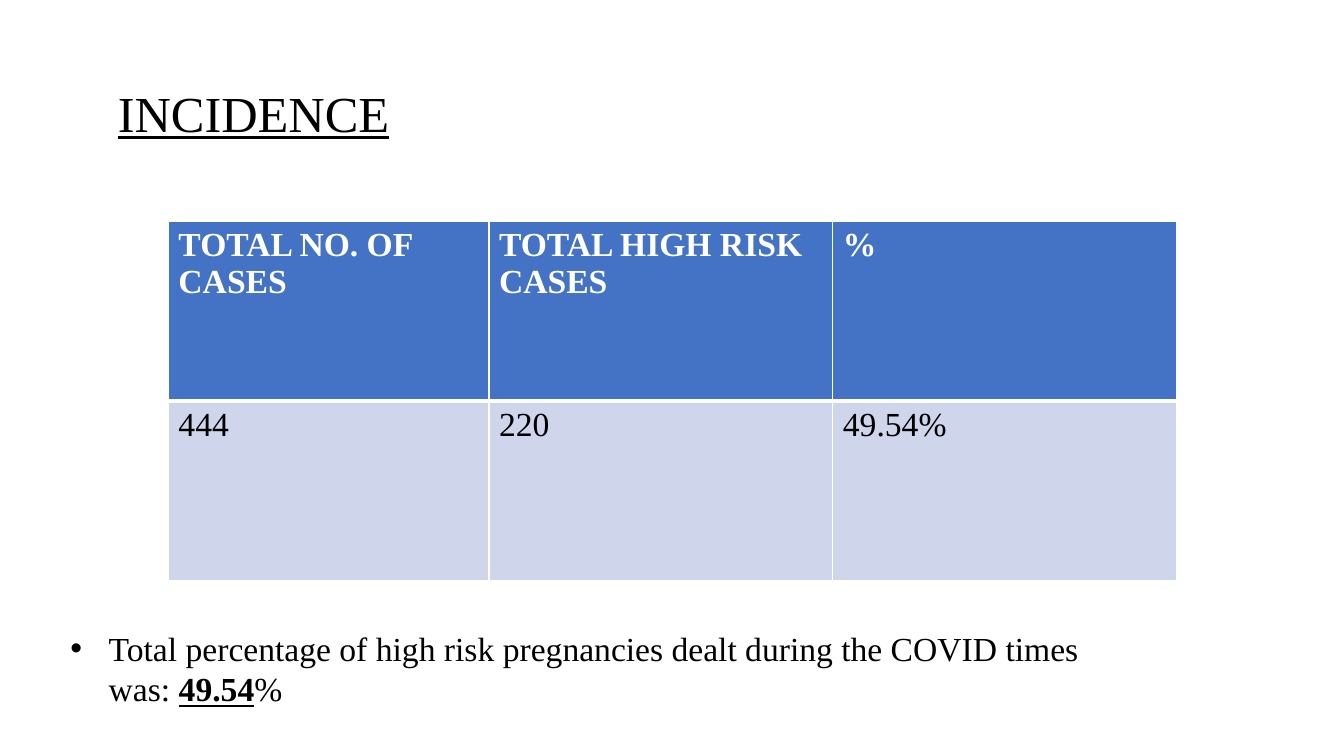
from dataclasses import dataclass

from lxml.etree import SubElement
from pptx import Presentation
from pptx.dml.color import RGBColor
from pptx.enum.text import MSO_ANCHOR
from pptx.oxml.ns import qn
from pptx.slide import Slide
from pptx.table import _Cell
from pptx.text.text import Font, TextFrame
from pptx.util import Inches, Pt

BLACK = RGBColor(0x00, 0x00, 0x00)
WHITE = RGBColor(0xFF, 0xFF, 0xFF)
HEADER_BLUE = RGBColor(0x44, 0x72, 0xC4)
BODY_BLUE = RGBColor(0xCF, 0xD5, 0xEA)
TYPEFACE = "Times New Roman"


@dataclass(frozen=True)
class RowStyle:
    fill: RGBColor
    color: RGBColor
    bold: bool
    bottom_border: float


@dataclass(frozen=True)
class IncidenceRow:
    values: tuple[str, ...]
    style: RowStyle


COLUMN_WIDTHS = (3.18, 3.41, 3.41)
ROW_HEIGHT = 1.78
ROWS = (
    IncidenceRow(
        ("TOTAL NO. OF CASES", "TOTAL HIGH RISK CASES", "%"),
        RowStyle(HEADER_BLUE, WHITE, True, 3),
    ),
    IncidenceRow(
        ("444", "220", "49.54%"),
        RowStyle(BODY_BLUE, BLACK, False, 1),
    ),
)


def set_font(font: Font, size: float, color: RGBColor) -> None:
    font.name = TYPEFACE
    font.size = Pt(size)
    font.color.rgb = color


def add_text_frame(
    slide: Slide, left: float, top: float, width: float, height: float
) -> TextFrame:
    frame = slide.shapes.add_textbox(
        Inches(left), Inches(top), Inches(width), Inches(height)
    ).text_frame
    frame.word_wrap = True
    frame.vertical_anchor = MSO_ANCHOR.BOTTOM
    return frame


def add_heading(slide: Slide) -> None:
    heading = add_text_frame(slide, 1.07, 0.25, 10.99, 1.22).paragraphs[0]
    heading.text = "INCIDENCE"
    heading.line_spacing = 0.9
    set_font(heading.font, 36, BLACK)
    heading.font.underline = True


def set_borders(cell: _Cell, bottom_width: float) -> None:
    properties = cell._tc.get_or_add_tcPr()
    widths = {"a:lnL": 1, "a:lnR": 1, "a:lnT": 1, "a:lnB": bottom_width}
    for position, (tag, width) in enumerate(widths.items()):
        border = properties.makeelement(qn(tag), {"w": str(Pt(width))})
        fill = SubElement(border, qn("a:solidFill"))
        SubElement(fill, qn("a:srgbClr"), val=str(WHITE))
        properties.insert(position, border)


def fill_cell(cell: _Cell, value: str, style: RowStyle) -> None:
    cell.text = value
    cell.fill.solid()
    cell.fill.fore_color.rgb = style.fill
    font = cell.text_frame.paragraphs[0].font
    set_font(font, 24, style.color)
    font.bold = style.bold
    set_borders(cell, style.bottom_border)


def add_incidence_table(slide: Slide) -> None:
    table = slide.shapes.add_table(
        len(ROWS),
        len(COLUMN_WIDTHS),
        Inches(1.67),
        Inches(2.2),
        Inches(sum(COLUMN_WIDTHS)),
        Inches(ROW_HEIGHT * len(ROWS)),
    ).table
    for column, width in zip(table.columns, COLUMN_WIDTHS):
        column.width = Inches(width)
    for table_row, row in zip(table.rows, ROWS):
        table_row.height = Inches(ROW_HEIGHT)
        for cell, value in zip(table_row.cells, row.values):
            fill_cell(cell, value, row.style)


def add_conclusion(slide: Slide) -> None:
    conclusion = add_text_frame(slide, 0.6, 3.75, 10.84, 3.33).paragraphs[0]
    set_font(conclusion.font, 24, BLACK)
    conclusion.add_run().text = (
        "Total percentage of high risk pregnancies dealt during the COVID times was: "
    )
    percentage = conclusion.add_run()
    percentage.text = "49.54"
    percentage.font.bold = True
    percentage.font.underline = True
    conclusion.add_run().text = "%"

    properties = conclusion._p.get_or_add_pPr()
    properties.set("marL", str(Inches(0.38)))
    properties.set("indent", str(Inches(-0.38)))
    bullet_font = properties.makeelement(qn("a:buFont"), {"typeface": "Arial"})
    bullet = properties.makeelement(qn("a:buChar"), {"char": "•"})
    properties.insert(0, bullet_font)
    properties.insert(1, bullet)


def main() -> None:
    presentation = Presentation()
    presentation.slide_width = Inches(13.33)
    presentation.slide_height = Inches(7.5)
    slide = presentation.slides.add_slide(presentation.slide_layouts[6])
    add_heading(slide)
    add_conclusion(slide)
    add_incidence_table(slide)
    presentation.save("out.pptx")


if __name__ == "__main__":
    main()
